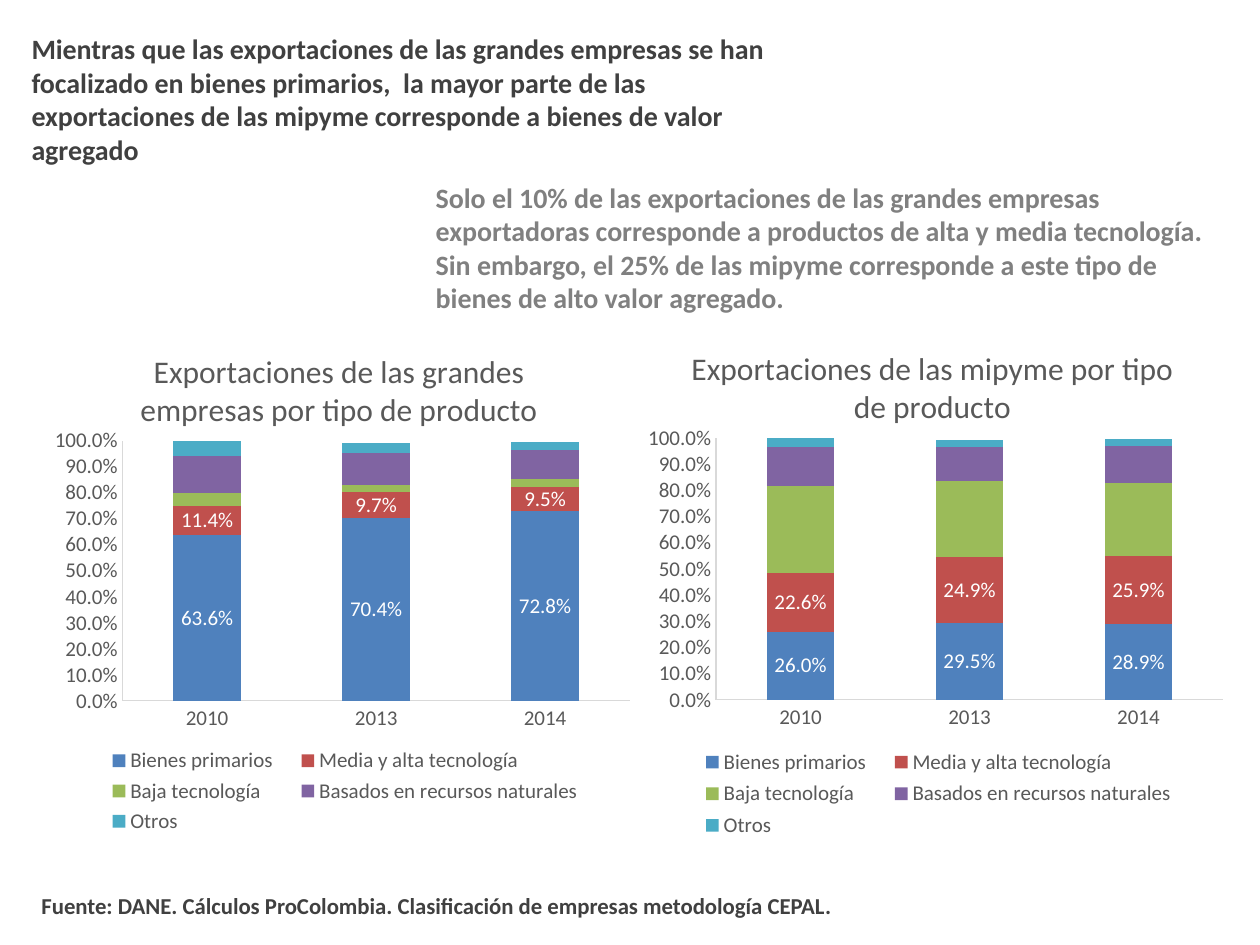
from dataclasses import dataclass

from lxml import etree
from pptx import Presentation
from pptx.chart.data import CategoryChartData
from pptx.dml.color import RGBColor
from pptx.enum.chart import XL_CHART_TYPE, XL_LABEL_POSITION, XL_LEGEND_POSITION, XL_TICK_MARK
from pptx.enum.text import MSO_ANCHOR, PP_ALIGN
from pptx.oxml.ns import qn
from pptx.util import Pt

STACKED = XL_CHART_TYPE.COLUMN_STACKED
CENTER = XL_LABEL_POSITION.CENTER
BOTTOM = XL_LEGEND_POSITION.BOTTOM
NO_TICK = XL_TICK_MARK.NONE
TOP = MSO_ANCHOR.TOP
LEFT = PP_ALIGN.LEFT


@dataclass(frozen=True)
class Theme:
    font: str = "Calibri"
    dark: str = "404040"
    gray: str = "808080"
    chart_text: str = "595959"
    axis_line: str = "D9D9D9"
    white: str = "FFFFFF"
    series: tuple = ("4F81BD", "C0504D", "9BBB59", "8064A2", "4BACC6")
    body_size: int = 16
    source_size: int = 13
    chart_title_size: int = 18
    chart_size: int = 12
    number_format: str = "0.0%"


@dataclass(frozen=True)
class Box:
    left: float
    top: float
    width: float
    height: float

    def lengths(self) -> tuple:
        return Pt(self.left), Pt(self.top), Pt(self.width), Pt(self.height)


@dataclass(frozen=True)
class ExportChart:
    title: str
    box: Box
    plot: Box
    legend: Box
    values: tuple


THEME = Theme()
YEARS = ("2010", "2013", "2014")
PRODUCTS = ("Bienes primarios", "Media y alta tecnología", "Baja tecnología",
            "Basados en recursos naturales", "Otros")
LABELLED = PRODUCTS[:2]
HEADLINE = ("Mientras que las exportaciones de las grandes empresas se han focalizado en bienes "
            "primarios,  la mayor parte de las exportaciones de las mipyme corresponde a bienes "
            "de valor agregado")
FINDING = ("Solo el 10% de las exportaciones de las grandes empresas exportadoras corresponde a "
           "productos de alta y media tecnología. Sin embargo, el 25% de las mipyme corresponde "
           "a este tipo de bienes de alto valor agregado.")
SOURCE = "Fuente: DANE. Cálculos ProColombia. Clasificación de empresas metodología CEPAL."
CHARTS = (
    ExportChart("Exportaciones de las grandes empresas por tipo de producto",
                Box(16.6, 186.5, 354.2, 305.3), Box(0.151, 0.214, 0.818, 0.487),
                Box(0.1, 0.78, 0.82, 0.18),
                ((0.636, 0.704, 0.728), (0.114, 0.097, 0.095), (0.05, 0.03, 0.03),
                 (0.14, 0.12, 0.11), (0.06, 0.04, 0.03))),
    ExportChart("Exportaciones de las mipyme por tipo de producto",
                Box(355.7, 185, 354.2, 305.3), Box(0.151, 0.214, 0.818, 0.49),
                Box(0.1, 0.785, 0.82, 0.19),
                ((0.26, 0.295, 0.289), (0.226, 0.249, 0.259), (0.33, 0.29, 0.28),
                 (0.15, 0.13, 0.14), (0.04, 0.03, 0.03))),
)


def style(font, size: int, color: str, bold: bool = False) -> None:
    font.name = THEME.font
    font.size = Pt(size)
    font.bold = bold
    font.color.rgb = RGBColor.from_string(color)


def write(sp, box: Box, text: str, size: int, color: str) -> None:
    sp.left, sp.top, sp.width, sp.height = box.lengths()
    tf = sp.text_frame
    tf.word_wrap = True
    tf.vertical_anchor = TOP
    p = tf.paragraphs[0]
    p.alignment = LEFT
    r = p.add_run()
    r.text = text
    style(r.font, size, color, bold=True)


def set_layout(parent, box: Box, inner: bool = False) -> None:
    for old in parent.findall(qn("c:layout")):
        parent.remove(old)
    layout = etree.Element(qn("c:layout"))
    manual = etree.SubElement(layout, qn("c:manualLayout"))
    settings = [("layoutTarget", "inner")] if inner else []
    settings += [("xMode", "edge"), ("yMode", "edge"), ("x", box.left), ("y", box.top),
                 ("w", box.width), ("h", box.height)]
    for tag, value in settings:
        etree.SubElement(manual, qn(f"c:{tag}")).set("val", str(value))
    parent.insert(0 if inner else 1, layout)


def format_axis(axis) -> None:
    axis.has_major_gridlines = False
    axis.major_tick_mark = axis.minor_tick_mark = NO_TICK
    axis.format.line.color.rgb = RGBColor.from_string(THEME.axis_line)
    axis.format.line.width = Pt(0.75)
    style(axis.tick_labels.font, THEME.chart_size, THEME.chart_text)


def add_export_chart(s, item: ExportChart) -> None:
    data = CategoryChartData(number_format=THEME.number_format)
    data.categories = YEARS
    for name, values in zip(PRODUCTS, item.values):
        data.add_series(name, values)
    chart = s.shapes.add_chart(STACKED, *item.box.lengths(), data).chart
    style(chart.font, THEME.chart_size, THEME.chart_text)

    chart.has_title = True
    r = chart.chart_title.text_frame.paragraphs[0].add_run()
    r.text = item.title
    style(r.font, THEME.chart_title_size, THEME.chart_text)
    chart.chart_title.include_in_layout = False

    format_axis(chart.category_axis)
    value_axis = chart.value_axis
    format_axis(value_axis)
    value_axis.minimum_scale, value_axis.maximum_scale = 0, 1
    value_axis.major_unit = 0.1
    value_axis.tick_labels.number_format = THEME.number_format
    value_axis.tick_labels.number_format_is_linked = False

    plot = chart.plots[0]
    plot.gap_width, plot.overlap = 150, 100
    plot.vary_by_categories = False
    for series, color in zip(plot.series, THEME.series):
        series.format.fill.solid()
        series.format.fill.fore_color.rgb = RGBColor.from_string(color)
        if series.name in LABELLED:
            labels = series.data_labels
            labels.show_value = True
            labels.position = CENTER
            labels.number_format = THEME.number_format
            labels.number_format_is_linked = False
            style(labels.font, THEME.chart_size, THEME.white)

    chart.has_legend = True
    legend = chart.legend
    legend.position = BOTTOM
    legend.include_in_layout = False
    style(legend.font, THEME.chart_size, THEME.chart_text)
    plot_area = chart.element.find(f"{qn('c:chart')}/{qn('c:plotArea')}")
    set_layout(plot_area, item.plot, inner=True)
    set_layout(chart.element.find(f"{qn('c:chart')}/{qn('c:legend')}"), item.legend)


def main() -> None:
    """Build the slide comparing exports of large firms and mipyme."""
    prs = Presentation()
    prs.slide_width, prs.slide_height = Pt(720), Pt(540)
    s = prs.slides.add_slide(prs.slide_layouts[5])
    write(s.shapes.title, Box(10.8, 14.4, 461.5, 85), HEADLINE, THEME.body_size, THEME.dark)
    for box, text, size, color in (
        (Box(241.9, 99.4, 461.5, 85), FINDING, THEME.body_size, THEME.gray),
        (Box(16.6, 506.2, 475.9, 23), SOURCE, THEME.source_size, THEME.dark),
    ):
        write(s.shapes.add_textbox(*box.lengths()), box, text, size, color)
    for item in CHARTS:
        add_export_chart(s, item)
    prs.save("out.pptx")


if __name__ == "__main__":
    main()
